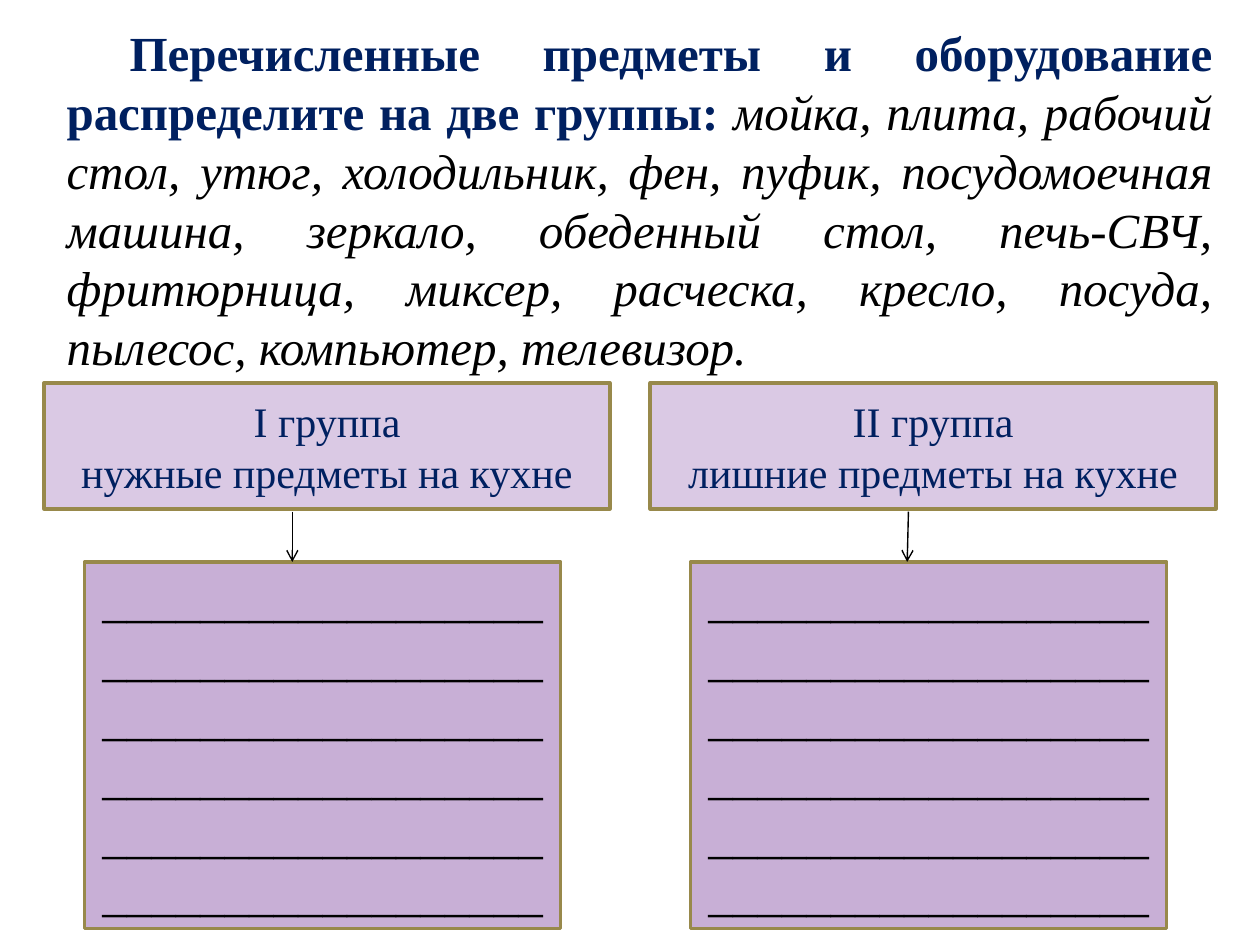
from dataclasses import dataclass

from lxml import etree
from pptx import Presentation
from pptx.dml.color import RGBColor
from pptx.enum import shapes, text
from pptx.oxml import ns
from pptx.util import Inches, Pt

FONT = "Times New Roman"
NAVY = RGBColor(0x00, 0x20, 0x60)
BLACK = RGBColor(0x00, 0x00, 0x00)
LILAC = RGBColor(0xDA, 0xC9, 0xE4)
VIOLET = RGBColor(0xC8, 0xAF, 0xD6)
OLIVE = RGBColor(0x98, 0x89, 0x4B)

TASK = "\tПеречисленные предметы и оборудование распределите на две группы: "
ITEMS = (
    "мойка, плита, рабочий стол, утюг, холодильник, фен, пуфик, "
    "посудомоечная машина, зеркало, обеденный стол, печь-СВЧ, фритюрница, "
    "миксер, расческа, кресло, посуда, пылесос, компьютер, телевизор."
)
ANSWER_LINES = 6
BLANKS_PER_LINE = 18


@dataclass(frozen=True)
class Group:
    left: float
    title: str
    arrow_start: float
    arrow_end: float


GROUPS = (
    Group(0.35, "I группа\nнужные предметы на кухне", 2.32, 2.32),
    Group(5.16, "II группа\nлишние предметы на кухне", 7.21, 7.2),
)


def style_run(run, size: float, color: RGBColor, bold=False, italic=False) -> None:
    run.font.name = FONT
    run.font.size = Pt(size)
    run.font.color.rgb = color
    run.font.bold = bold
    run.font.italic = italic


def add_task(slide) -> None:
    task = slide.shapes.add_textbox(Inches(0.43), Inches(0.13), Inches(9.29), Inches(2.93))
    task.text_frame.word_wrap = True
    paragraph = task.text_frame.paragraphs[0]
    paragraph.text = TASK
    paragraph.alignment = text.PP_ALIGN.JUSTIFY
    style_run(paragraph.runs[0], 28, NAVY, bold=True)
    items = paragraph.add_run()
    items.text = ITEMS
    style_run(items, 28, BLACK, italic=True)


def add_panel(slide, left: float, top: float, width: float, height: float,
              fill: RGBColor, content: str, size: float, color: RGBColor) -> None:
    panel = slide.shapes.add_shape(
        shapes.MSO_SHAPE.RECTANGLE, Inches(left), Inches(top), Inches(width), Inches(height))
    panel.shadow.inherit = False
    panel.fill.solid()
    panel.fill.fore_color.rgb = fill
    panel.line.color.rgb = OLIVE
    panel.line.width = Pt(2)
    frame = panel.text_frame
    frame.word_wrap = True
    frame.vertical_anchor = text.MSO_ANCHOR.MIDDLE
    frame.text = content
    for paragraph in frame.paragraphs:
        paragraph.alignment = text.PP_ALIGN.CENTER
        for run in paragraph.runs:
            style_run(run, size, color)


def add_arrow(slide, start: float, end: float) -> None:
    arrow = slide.shapes.add_connector(
        shapes.MSO_CONNECTOR.STRAIGHT, Inches(start), Inches(4.06), Inches(end), Inches(4.46))
    arrow.line.color.rgb = BLACK
    arrow.line.width = Pt(0.79)
    properties = arrow.line._get_or_add_ln()
    etree.SubElement(properties, ns.qn("a:tailEnd"), type="arrow")
    etree.SubElement(arrow._element.spPr, ns.qn("a:effectLst"))


def main() -> None:
    deck = Presentation()
    deck.slide_width = Inches(10)
    deck.slide_height = Inches(7.5)
    slide = deck.slides.add_slide(deck.slide_layouts[6])
    add_task(slide)
    blanks = "_" * (ANSWER_LINES * BLANKS_PER_LINE)
    for group in GROUPS:
        add_panel(slide, group.left, 3.04, 4.49, 1, LILAC, group.title, 24, NAVY)
        add_panel(slide, group.left + 0.32, 4.46, 3.78, 2.91, VIOLET, blanks, 28, BLACK)
        add_arrow(slide, group.arrow_start, group.arrow_end)
    deck.save("out.pptx")


if __name__ == "__main__":
    main()
